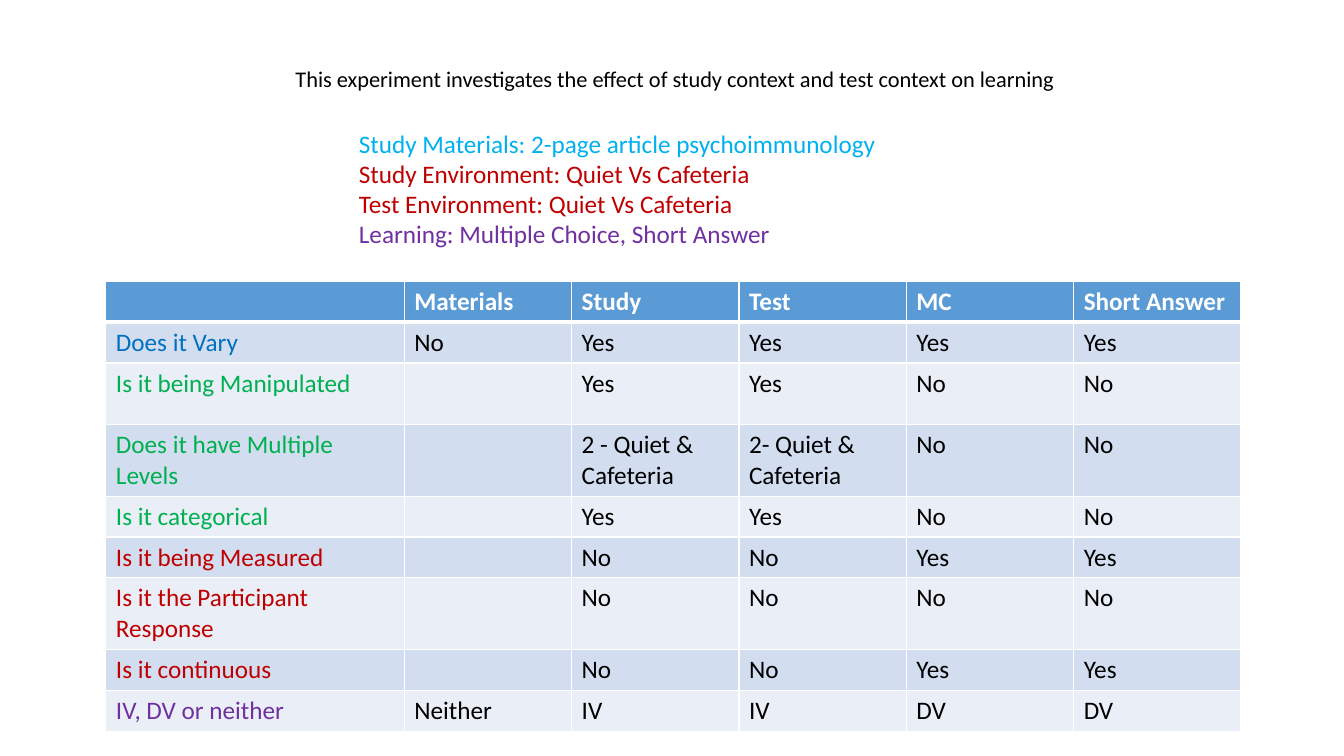
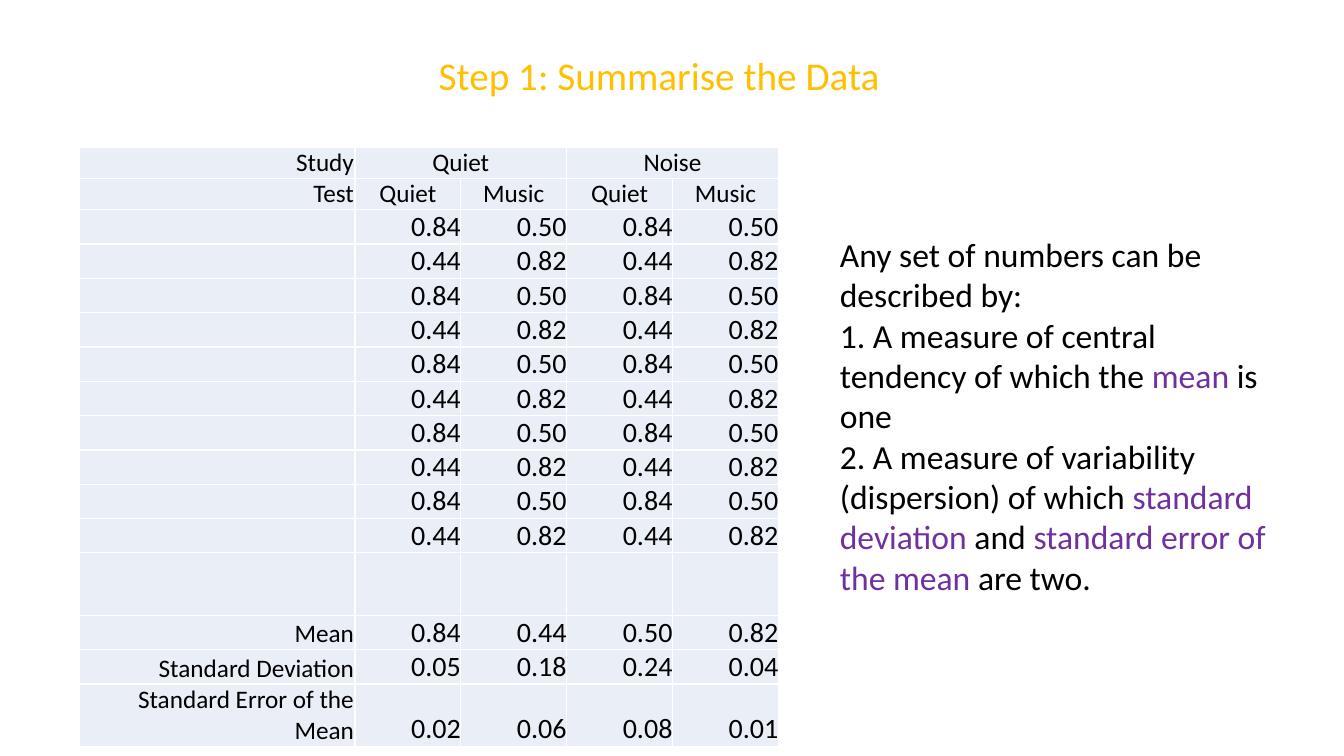
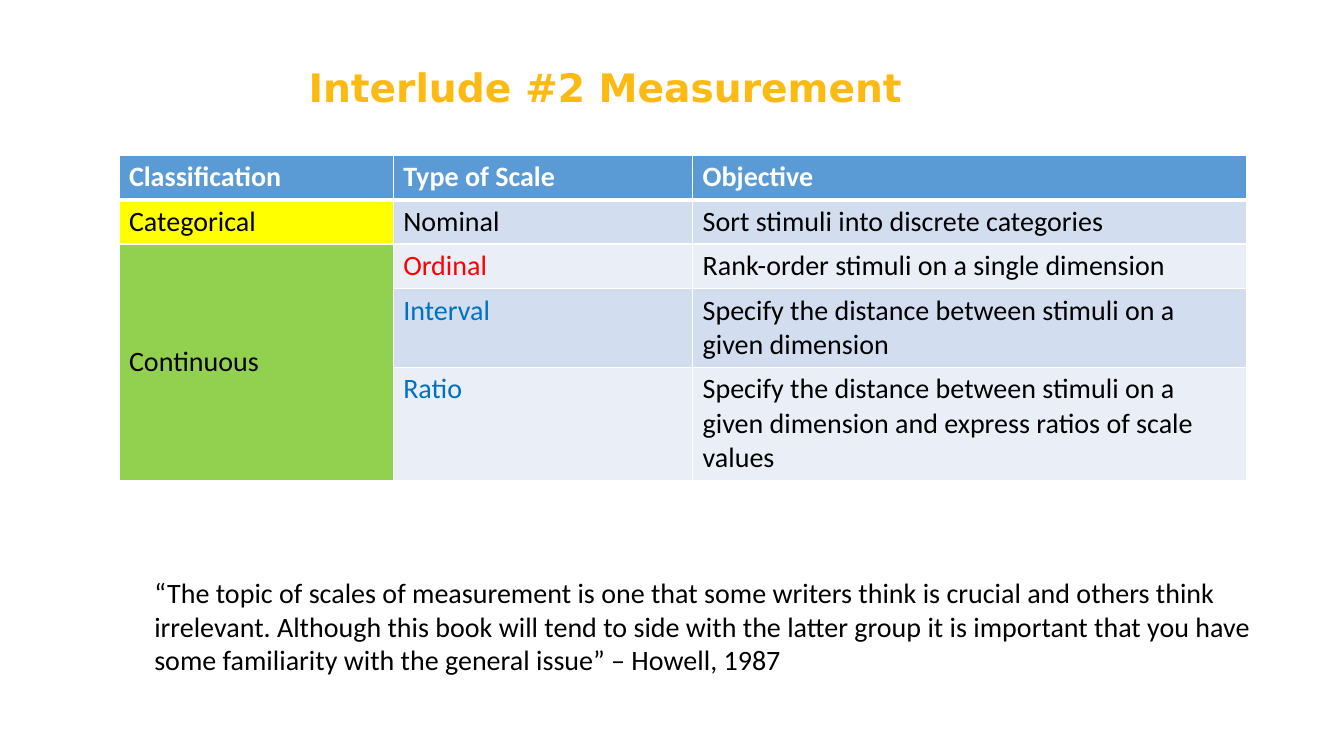
"""Build three slides on experimental variables, data summary and measurement scales."""
from lxml import etree
from pptx import Presentation
from pptx import util as u
from pptx.dml.color import RGBColor
from pptx.enum import text
from pptx.oxml import ns

PX = 9144
WHITE = RGBColor(0xFF, 0xFF, 0xFF)
BLACK = RGBColor(0x00, 0x00, 0x00)
HEADER = RGBColor(0x5B, 0x9B, 0xD5)
BAND_DARK = RGBColor(0xD2, 0xDE, 0xEF)
BAND_LIGHT = RGBColor(0xEA, 0xEF, 0xF7)
SKY = RGBColor(0x00, 0xB0, 0xF0)
BLUE = RGBColor(0x00, 0x70, 0xC0)
GREEN = RGBColor(0x00, 0xB0, 0x50)
LIME = RGBColor(0x92, 0xD0, 0x50)
CRIMSON = RGBColor(0xC0, 0x00, 0x00)
RED = RGBColor(0xFF, 0x00, 0x00)
PURPLE = RGBColor(0x70, 0x30, 0xA0)
YELLOW = RGBColor(0xFF, 0xFF, 0x00)
GOLD = RGBColor(0xFF, 0xC0, 0x00)
AMBER = RGBColor(0xFD, 0xBA, 0x12)
LEFT, CENTER, RIGHT = text.PP_ALIGN.LEFT, text.PP_ALIGN.CENTER, text.PP_ALIGN.RIGHT
TOP, MIDDLE, BOTTOM = text.MSO_ANCHOR.TOP, text.MSO_ANCHOR.MIDDLE, text.MSO_ANCHOR.BOTTOM


class Deck:
    """Hold the shared style and the current slide."""

    font = "Calibri"

    def __init__(self):
        self.presentation = Presentation()
        self.presentation.slide_width = u.Emu(1333 * PX)
        self.presentation.slide_height = u.Emu(750 * PX)
        self.slide = None

    def add_slide(self):
        layout = self.presentation.slide_layouts[1]
        self.slide = self.presentation.slides.add_slide(layout)

    def add_runs(self, paragraph, runs, size, bold=False, font=None):
        for words, color in runs:
            run = paragraph.add_run()
            run.text = words
            run.font.name = font or self.font
            run.font.size = u.Pt(size)
            run.font.bold = bold
            run.font.color.rgb = color

    def place(self, shape, box):
        shape.left, shape.top, shape.width, shape.height = (u.Emu(n * PX) for n in box)
        frame = shape.text_frame
        frame.word_wrap = True
        frame.auto_size = text.MSO_AUTO_SIZE.NONE
        frame.vertical_anchor = TOP
        return frame

    def title(self, box, words, color, size=28, bold=False, font=None, spacing=1.0):
        paragraph = self.place(self.slide.shapes.title, box).paragraphs[0]
        paragraph.alignment = LEFT
        paragraph.line_spacing = spacing
        self.add_runs(paragraph, [(words, color)], size, bold, font)

    def body(self, box, lines, size):
        frame = self.place(self.slide.placeholders[1], box)
        for index, runs in enumerate(lines):
            paragraph = frame.add_paragraph() if index else frame.paragraphs[0]
            paragraph.space_before = u.Pt(0)
            self.add_runs(paragraph, runs, size)
            properties = paragraph._p.get_or_add_pPr()
            properties.set("marL", "0")
            properties.set("indent", "0")
            etree.SubElement(properties, ns.qn("a:buNone"))

    def grid(self, left, top, widths, heights, header=True):
        frame = self.slide.shapes.add_table(
            len(heights), len(widths), *(u.Emu(n * PX) for n in (left, top, sum(widths), sum(heights))))
        table = frame.table
        table.first_row = header
        table.horz_banding = header
        for column, width in zip(table.columns, widths):
            column.width = u.Emu(width * PX)
        for row, height in zip(table.rows, heights):
            row.height = u.Emu(height * PX)
        return table

    def borders(self, cell, bottom):
        properties = cell._tc.get_or_add_tcPr()
        for index, side in enumerate("LRTB"):
            width = bottom if side == "B" else 1
            line = etree.Element(ns.qn(f"a:ln{side}"), w=str(u.Pt(width)))
            fill = etree.SubElement(line, ns.qn("a:solidFill"))
            etree.SubElement(fill, ns.qn("a:srgbClr"), val=str(WHITE))
            properties.insert(index, line)

    def cell(self, cell, words, size, fill, color=BLACK, bold=False, bottom=1,
             align=LEFT, anchor=TOP, inset=None):
        cell.fill.solid()
        cell.fill.fore_color.rgb = fill
        cell.vertical_anchor = anchor
        if inset is not None:
            cell.margin_left = cell.margin_right = u.Emu(inset * PX)
            cell.margin_top = cell.margin_bottom = u.Emu(0)
        self.borders(cell, bottom)
        if words:
            paragraph = cell.text_frame.paragraphs[0]
            paragraph.alignment = align
            self.add_runs(paragraph, [(words, color)], size, bold)

    def banded_table(self, left, top, widths, heights, rows, size, inks):
        table = self.grid(left, top, widths, heights)
        for r, row in enumerate(rows):
            for c, words in enumerate(row):
                if r == 0:
                    self.cell(table.cell(r, c), words, size, HEADER, WHITE, bold=True, bottom=3)
                else:
                    band = BAND_DARK if r % 2 else BAND_LIGHT
                    self.cell(table.cell(r, c), words, size, band, inks.get((r, c), BLACK))
        return table

    def data_table(self, left, top, widths, heights, rows):
        table = self.grid(left, top, widths, heights, header=False)
        for r, row in enumerate(rows):
            for c, words in enumerate(row):
                heading = r < 2 and c > 0
                label = r < 2 or c == 0
                self.cell(table.cell(r, c), words, 18 if label else 20, BAND_LIGHT,
                          align=CENTER if heading else RIGHT,
                          anchor=MIDDLE if heading else BOTTOM, inset=1 if label else 0)
        return table


def variables_slide(deck):
    deck.add_slide()
    deck.title((283, 60, 1023, 37),
               "This experiment investigates the effect of study context and test context on learning",
               BLACK, size=16)
    deck.body((346, 122, 641, 131), [
        [("Study Materials: 2-page article psychoimmunology", SKY)],
        [("Study Environment: Quiet Vs Cafeteria", CRIMSON)],
        [("Test Environment: Quiet Vs Cafeteria", CRIMSON)],
        [("Learning: Multiple Choice, Short Answer", PURPLE)],
    ], 18)
    rows = [
        ("", "Materials", "Study", "Test", "MC", "Short Answer"),
        ("Does it Vary", "No", "Yes", "Yes", "Yes", "Yes"),
        ("Is it being Manipulated", "", "Yes", "Yes", "No", "No"),
        ("Does it have Multiple Levels", "", "2 - Quiet & Cafeteria", "2- Quiet & Cafeteria", "No", "No"),
        ("Is it categorical", "", "Yes", "Yes", "No", "No"),
        ("Is it being Measured", "", "No", "No", "Yes", "Yes"),
        ("Is it the Participant Response", "", "No", "No", "No", "No"),
        ("Is it continuous", "", "No", "No", "Yes", "Yes"),
        ("IV, DV or neither", "Neither", "IV", "IV", "DV", "DV"),
    ]
    label_inks = [BLUE] + [GREEN] * 3 + [CRIMSON] * 3 + [PURPLE]
    inks = {(r, 0): color for r, color in enumerate(label_inks, 1)}
    deck.banded_table(105, 279, [296] + [166] * 5, [40, 40, 61, 70, 40, 40, 70, 40, 40],
                      rows, 18, inks)


def summary_slide(deck):
    deck.add_slide()
    deck.title((425, 46, 588, 57), "Step 1: Summarise the Data", GOLD)
    scores = [("", "0.84", "0.50", "0.84", "0.50"), ("", "0.44", "0.82", "0.44", "0.82")] * 5
    rows = [
        ("Study", "Quiet", "", "Noise", ""),
        ("Test", "Quiet", "Music", "Quiet", "Music"),
        *scores,
        ("",) * 5,
        ("Mean", "0.84", "0.44", "0.50", "0.82"),
        ("Standard Deviation", "0.05", "0.18", "0.24", "0.04"),
        ("Standard Error of the Mean", "0.02", "0.06", "0.08", "0.01"),
    ]
    heights = [31] * 2 + [33] * 10 + [62, 33, 33, 62]
    table = deck.data_table(79, 146, [273] + [105] * 4, heights, rows)
    for column in (1, 3):
        table.cell(0, column).merge(table.cell(0, column + 1))
    deck.body((823, 227, 462, 414), [
        [("Any set of numbers can be described by:", BLACK)],
        [("1. A measure of central tendency of which the ", BLACK), ("mean", PURPLE), (" is one", BLACK)],
        [("2. A measure of variability (dispersion) of which ", BLACK), ("standard deviation ", PURPLE),
         ("and ", BLACK), ("standard error of the mean ", PURPLE), ("are two.", BLACK)],
    ], 24)


def measurement_slide(deck):
    deck.add_slide()
    deck.title((296, 63, 900, 107), "Interlude #2 Measurement", AMBER,
               bold=True, font="DejaVu Sans", spacing=0.9)
    rows = [
        ("Classification", "Type of Scale", "Objective"),
        ("Categorical", "Nominal", "Sort stimuli into discrete categories"),
        ("Continuous", "Ordinal", "Rank-order stimuli on a single dimension"),
        ("", "Interval", "Specify the distance between stimuli on a given dimension"),
        ("", "Ratio", "Specify the distance between stimuli on a given dimension "
                      "and express ratios of scale values"),
    ]
    inks = {(2, 1): RED, (3, 1): BLUE, (4, 1): BLUE}
    table = deck.banded_table(118, 154, [272, 297, 549], [43, 43, 43, 77, 111], rows, 20, inks)
    table.cell(1, 0).fill.fore_color.rgb = YELLOW
    continuous = table.cell(2, 0)
    continuous.merge(table.cell(4, 0))
    continuous.fill.fore_color.rgb = LIME
    continuous.vertical_anchor = MIDDLE
    deck.body((143, 566, 1123, 145), [[(
        "“The topic of scales of measurement is one that some writers think is crucial and others "
        "think irrelevant. Although this book will tend to side with the latter group it is important "
        "that you have some familiarity with the general issue” – Howell, 1987", BLACK)]], 20)


def main():
    deck = Deck()
    variables_slide(deck)
    summary_slide(deck)
    measurement_slide(deck)
    deck.presentation.save("out.pptx")


if __name__ == "__main__":
    main()
